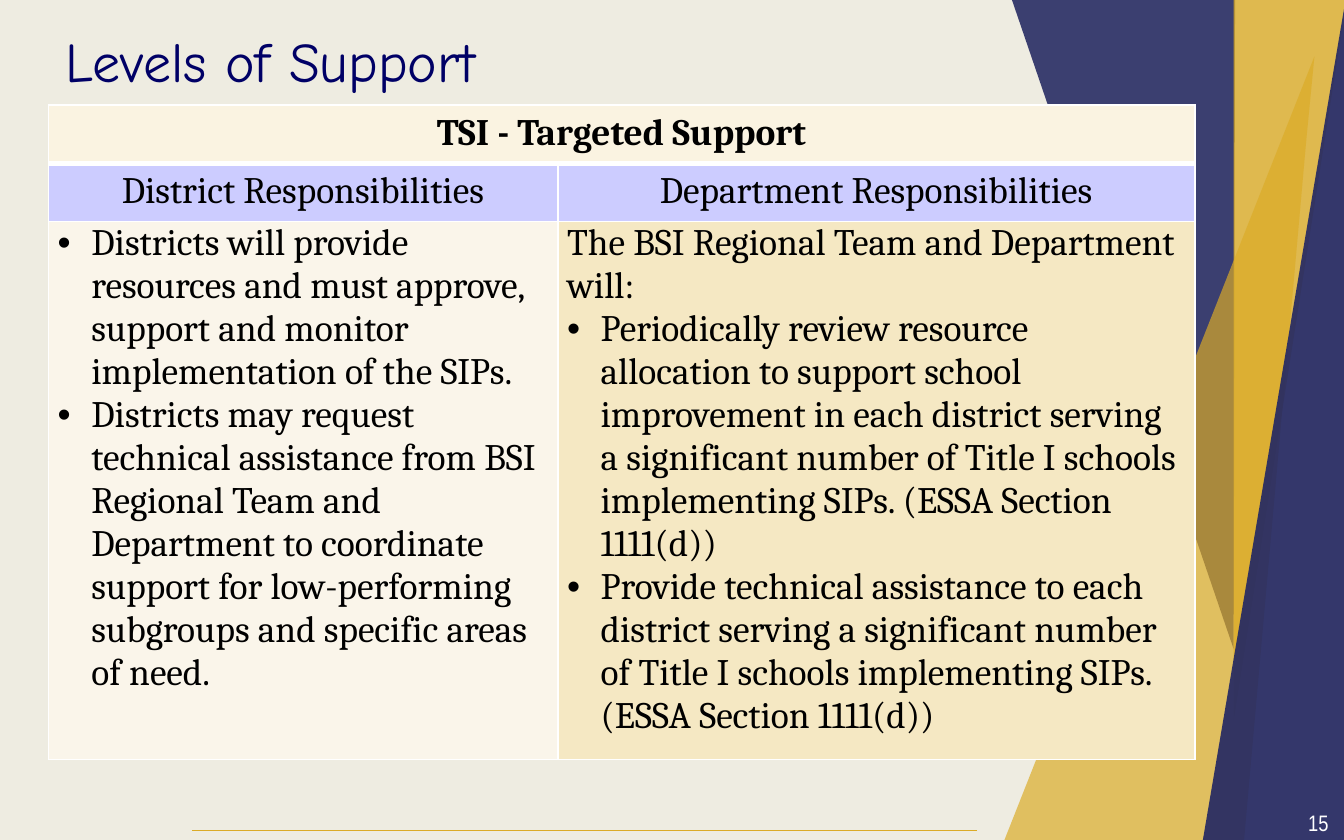
from dataclasses import dataclass

from lxml.etree import SubElement
from pptx import Presentation
from pptx.dml.color import RGBColor
from pptx.enum.shapes import MSO_CONNECTOR as CONNECTOR
from pptx.enum.text import MSO_ANCHOR as ANCHOR, PP_ALIGN as ALIGN
from pptx.oxml.ns import qn
from pptx.util import Inches, Pt


@dataclass(frozen=True)
class Theme:
    background: str = "EEECE1"
    navy: str = "262A63"
    gold: str = "DBAB27"
    title: str = "000066"
    black: str = "000000"
    white: str = "FFFFFF"
    banner: str = "FAF3E1"
    heading: str = "CCCCFF"
    district: str = "FAF5EA"
    department: str = "F5E8C3"
    title_font: str = "Comic Neue"
    body_font: str = "Cambria"
    number_font: str = "Arial Narrow"
    title_size: int = 30
    body_size: int = 20
    number_size: int = 12


THEME = Theme()

FACETS = [
    (THEME.navy, 89, [(7.53, 0), (9.18, 4.83), (9.19, 0)]),
    (THEME.gold, 78, [(9.18, 0), (9.18, 5.36), (10.02, 0)]),
    (THEME.gold, 69, [(7.43, 6.36), (9.78, 0.42), (9.72, 1.04), (9.25, 6.33)]),
    (THEME.navy, 93, [(8.94, 6.31), (10.01, 0.01), (10.01, 6.31)]),
]

DISTRICT = [
    ("Districts will provide resources and must approve, support and monitor "
     "implementation of the SIPs.", True),
    ("Districts may request technical assistance from BSI Regional Team and "
     "Department to coordinate support for low-performing subgroups and "
     "specific areas of need.", True),
]
DEPARTMENT = [
    ("The BSI Regional Team and Department will:", False),
    ("Periodically review resource allocation to support school improvement "
     "in each district serving a significant number of Title I schools "
     "implementing SIPs. (ESSA Section 1111(d))", True),
    ("Provide technical assistance to each district serving a significant "
     "number of Title I schools implementing SIPs. (ESSA Section 1111(d))", True),
]


def rgb(color):
    return RGBColor.from_string(color)


def style_runs(p, font, size, color, bold=False):
    for r in p.runs:
        r.font.name = font
        r.font.size = Pt(size)
        r.font.color.rgb = rgb(color)
        r.font.bold = bold


def add_facet(s, color, opacity, points):
    corners = [(Inches(x), Inches(y)) for x, y in points]
    builder = s.shapes.build_freeform(*corners[0])
    builder.add_line_segments(corners[1:], close=True)
    sp = builder.convert_to_shape()
    sp.shadow.inherit = False
    sp.fill.solid()
    sp.fill.fore_color.rgb = rgb(color)
    sp.line.fill.background()
    clr = sp.fill._xPr.find(qn("a:solidFill")).find(qn("a:srgbClr"))
    SubElement(clr, qn("a:alpha"), val=str(opacity * 1000))


def add_rule(s, left, right, y):
    line = s.shapes.add_connector(
        CONNECTOR.STRAIGHT, Inches(left), Inches(y), Inches(right), Inches(y))
    line.line.color.rgb = rgb(THEME.gold)
    line.line.width = Pt(0.75)
    SubElement(line._element.spPr, qn("a:effectLst"))


def add_label(s, text, box, inset, font, size, color, align):
    sp = s.shapes.add_textbox(*(Inches(v) for v in box))
    tf = sp.text_frame
    tf.word_wrap = True
    tf.vertical_anchor = ANCHOR.MIDDLE
    tf.margin_left = tf.margin_right = Inches(0.1)
    tf.margin_top = tf.margin_bottom = Inches(inset)
    tf.text = text
    p = tf.paragraphs[0]
    p.alignment = align
    style_runs(p, font, size, color)


def set_borders(cell, bottom=1):
    tcPr = cell._tc.get_or_add_tcPr()
    for side, width in (("L", 1), ("R", 1), ("T", 1), ("B", bottom)):
        ln = SubElement(tcPr, qn(f"a:ln{side}"), w=str(Pt(width)))
        fill = SubElement(ln, qn("a:solidFill"))
        SubElement(fill, qn("a:srgbClr"), val=THEME.white)


def fill_cell(cell, color, bottom=1):
    set_borders(cell, bottom)
    cell.fill.solid()
    cell.fill.fore_color.rgb = rgb(color)


def add_bullet(p):
    pPr = p._p.get_or_add_pPr()
    pPr.set("marL", str(Inches(0.25)))
    pPr.set("indent", str(-Inches(0.25)))
    clr = SubElement(pPr, qn("a:buClr"))
    SubElement(clr, qn("a:srgbClr"), val=THEME.black)
    SubElement(pPr, qn("a:buFont"), typeface="Arial")
    SubElement(pPr, qn("a:buChar"), char="•")


def write_heading(cell, text, color, bold=False, bottom=1):
    fill_cell(cell, color, bottom)
    cell.text_frame.text = text
    p = cell.text_frame.paragraphs[0]
    p.alignment = ALIGN.CENTER
    style_runs(p, THEME.body_font, THEME.body_size, THEME.black, bold)


def write_duties(cell, duties, color):
    fill_cell(cell, color)
    cell.margin_left = cell.margin_right = Inches(0.07)
    cell.margin_top = cell.margin_bottom = 0
    tf = cell.text_frame
    tf.text = "\n".join(text for text, _ in duties)
    for p, (_, bulleted) in zip(tf.paragraphs, duties):
        if bulleted:
            add_bullet(p)
        style_runs(p, THEME.body_font, THEME.body_size, THEME.black)


def add_support_table(s):
    widths, heights = (3.79, 4.74), (0.42, 0.42, 3.84)
    table = s.shapes.add_table(
        3, 2, Inches(0.36), Inches(0.78),
        Inches(sum(widths)), Inches(sum(heights))).table
    table.first_row = table.horz_banding = False
    for column, width in zip(table.columns, widths):
        column.width = Inches(width)
    for row, height in zip(table.rows, heights):
        row.height = Inches(height)

    banner = table.cell(0, 0)
    banner.merge(table.cell(0, 1))
    write_heading(banner, "TSI - Targeted Support", THEME.banner, True, 3)
    fill_cell(table.cell(0, 1), THEME.banner, 3)
    write_heading(table.cell(1, 0), "District Responsibilities", THEME.heading)
    write_heading(table.cell(1, 1), "Department Responsibilities", THEME.heading)
    write_duties(table.cell(2, 0), DISTRICT, THEME.district)
    write_duties(table.cell(2, 1), DEPARTMENT, THEME.department)


def main():
    prs = Presentation()
    prs.slide_width, prs.slide_height = Inches(10), Inches(6.25)
    s = prs.slides.add_slide(prs.slide_layouts[6])
    s.background.fill.solid()
    s.background.fill.fore_color.rgb = rgb(THEME.background)

    for facet in FACETS:
        add_facet(s, *facet)
    add_rule(s, 1.43, 7.27, 6.18)
    add_label(s, "15", (9.53, 5.95, 0.56, 0.34), 0.05, THEME.number_font,
              THEME.number_size, THEME.white, ALIGN.CENTER)
    add_label(s, "Levels of Support", (0.39, 0.08, 6.36, 0.73), 0.1,
              THEME.title_font, THEME.title_size, THEME.title, ALIGN.LEFT)
    add_support_table(s)
    prs.save("out.pptx")


if __name__ == "__main__":
    main()
